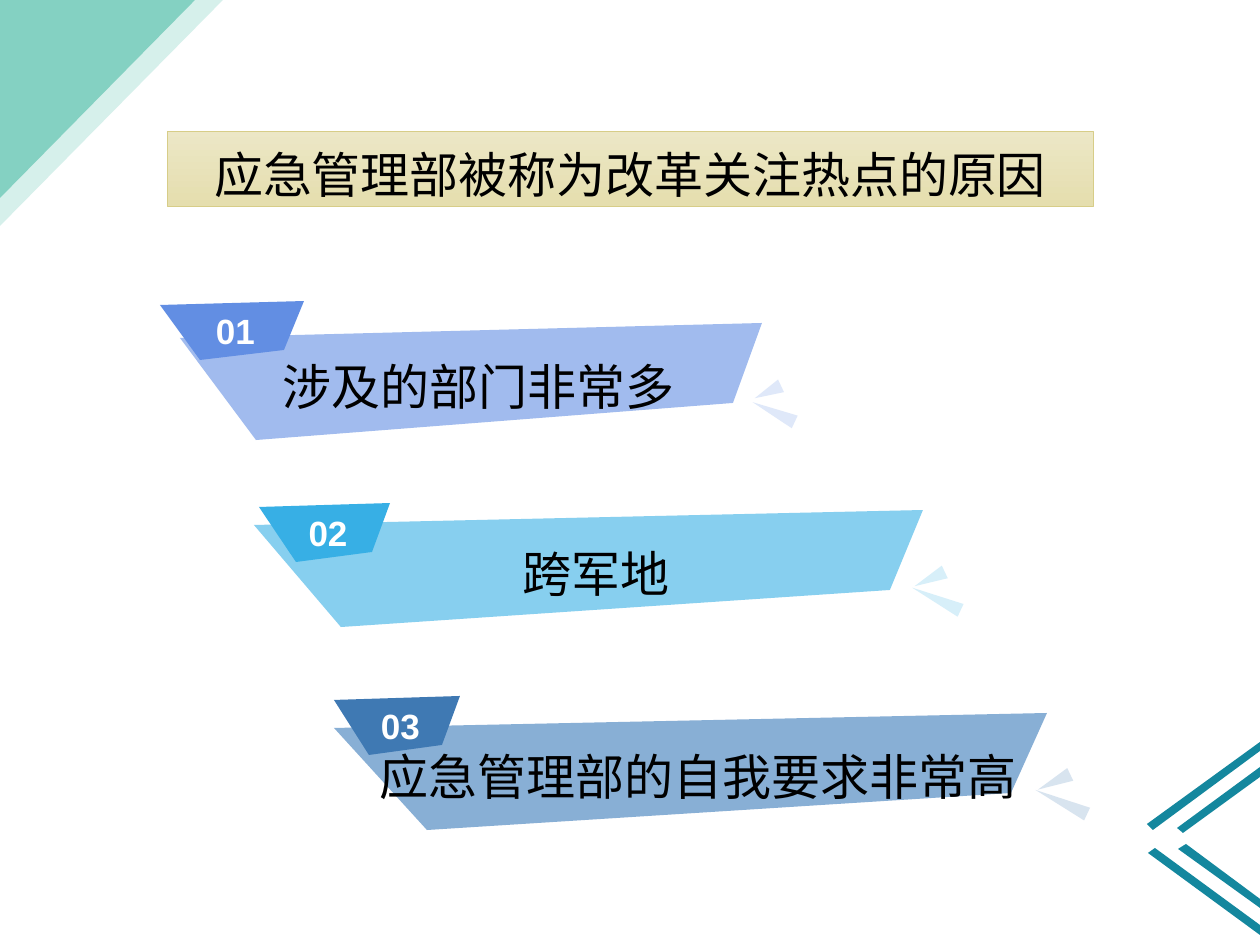
import pptx
import pptx.util
import pptx.dml.color
import pptx.enum.shapes
import pptx.enum.text
import pptx.oxml.ns
import lxml.etree

SCALE = 914400 / 126
COLORS = {
    "mint": "84D1C2", "pale_mint": "D6F0EB", "teal": "14879E",
    "cream": "ECE7C6", "sand": "E5DEAE", "edge": "D7CD88",
    "black": "000000", "white": "FFFFFF",
}
ITEMS = [
    {"number": "01", "text": "涉及的部门非常多", "band": (180, 323, 582),
     "tab": (160, 301, 144), "light": "A1BBEE", "dark": "628EE3"},
    {"number": "02", "text": "跨军地", "band": (254, 510, 669),
     "tab": (259, 503, 131), "light": "87CFEF", "dark": "37AFE5"},
    {"number": "03", "text": "应急管理部的自我要求非常高", "band": (334, 713, 713),
     "tab": (334, 696, 126), "light": "88AFD5", "dark": "3F79B3"},
]
BAND_CORNERS = [(1, 0), (0.95, 80), (0.13, 117), (0, 15)]
TAB_CORNERS = [(1, 0), (0.86, 49), (0.28, 59), (0, 4)]
STRIPES = [
    [(1147, 824), (1153, 830), (1260, 751), (1260, 742)],
    [(1148, 853), (1260, 935), (1260, 925), (1155, 848)],
    [(1260, 767), (1177, 828), (1183, 833), (1260, 777)],
    [(1186, 844), (1178, 849), (1260, 908), (1260, 899)],
]
SPARKS = [(0.02, 89, 0.08, 295.1), (0.01, 69, 0.05, 244.7)]
HEADING = {"name": "Noto Sans CJK SC", "size": pptx.util.Pt(28), "bold": False}
NUMBER = {"name": "Arial", "size": pptx.util.Pt(20), "bold": True}


def px(value):
    return pptx.util.Emu(round(value * SCALE))


def rgb(color):
    return pptx.dml.color.RGBColor.from_string(COLORS.get(color, color))


def set_values(target, values):
    for name, value in values.items():
        setattr(target, name, value)


class SlidePainter:
    def __init__(self, slide):
        self.slide = slide

    def paint(self, shape, color, alpha=None):
        shape.shadow.inherit = False
        shape.fill.solid()
        shape.fill.fore_color.rgb = rgb(color)
        shape.line.fill.background()
        if alpha is not None:
            tag = pptx.oxml.ns.qn("a:srgbClr")
            node = next(shape._element.spPr.iter(tag))
            lxml.etree.SubElement(node, pptx.oxml.ns.qn("a:alpha"), val=str(alpha * 1000))

    def add_text(self, shape, text, font, color, insets, spacing=1.0):
        frame = shape.text_frame
        set_values(frame, {
            "word_wrap": True,
            "auto_size": pptx.enum.text.MSO_AUTO_SIZE.NONE,
            "vertical_anchor": pptx.enum.text.MSO_ANCHOR.MIDDLE,
        })
        sides = ("margin_left", "margin_top", "margin_right", "margin_bottom")
        set_values(frame, dict(zip(sides, map(px, insets))))
        para = frame.paragraphs[0]
        set_values(para, {"alignment": pptx.enum.text.PP_ALIGN.CENTER, "line_spacing": spacing})
        span = para.add_run()
        span.text = text
        set_values(span.font, font)
        span.font.color.rgb = rgb(color)
        properties = span._r.get_or_add_rPr()
        lxml.etree.SubElement(properties, pptx.oxml.ns.qn("a:ea"), typeface=font["name"])

    def title(self, text, left, top, width, height):
        box = self.slide.shapes.title
        set_values(box, {"left": px(left), "top": px(top), "width": px(width), "height": px(height)})
        box.fill.gradient()
        box.fill.gradient_angle = 270
        for stop, color in zip(box.fill.gradient_stops, ("cream", "sand")):
            stop.color.rgb = rgb(color)
        box.line.color.rgb = rgb("edge")
        box.line.width = pptx.util.Pt(0.5)
        self.add_text(box, text, HEADING, "black", (13, 6, 13, 6), 1.2)

    def corner(self, width, height, color):
        kind = pptx.enum.shapes.MSO_SHAPE.RIGHT_TRIANGLE
        shape = self.slide.shapes.add_shape(kind, 0, 0, px(width), px(height))
        shape._element.spPr.xfrm.set("flipV", "1")
        self.paint(shape, color)

    def polygon(self, points, color):
        builder = self.slide.shapes.build_freeform(*points[0], scale=SCALE)
        builder.add_line_segments(points[1:], close=True)
        shape = builder.convert_to_shape()
        self.paint(shape, color)
        return shape

    def panel(self, place, corners, color):
        left, top, width = place
        return self.polygon([(round(left + x * width), top + y) for x, y in corners], color)

    def spark(self, center_x, center_y, length, rotation, color):
        kind = pptx.enum.shapes.MSO_SHAPE.ISOSCELES_TRIANGLE
        shape = self.slide.shapes.add_shape(
            kind, px(center_x - 7), px(center_y - length / 2), px(14), px(length))
        shape.rotation = rotation
        self.paint(shape, color, alpha=20)

    def item(self, number, text, band, tab, light, dark):
        banner = self.panel(band, BAND_CORNERS, light)
        self.add_text(banner, text, HEADING, "black", (30, 15, 15, 6))
        left, top, width = band
        for shift, drop, length, rotation in SPARKS:
            self.spark(left + width + shift * width, top + drop, length * width, rotation, dark)
        label = self.panel(tab, TAB_CORNERS, dark)
        self.add_text(label, number, NUMBER, "white", (20, 6, 13, 6))


def main():
    deck = pptx.Presentation()
    deck.slide_width, deck.slide_height = px(1260), px(945)
    painter = SlidePainter(deck.slides.add_slide(deck.slide_layouts[5]))
    painter.corner(223, 226, "pale_mint")
    painter.corner(195, 198, "mint")
    for stripe in STRIPES:
        painter.polygon(stripe, "teal")
    painter.title("应急管理部被称为改革关注热点的原因", 167, 131, 926, 75)
    for item in ITEMS:
        painter.item(**item)
    deck.save("out.pptx")


if __name__ == "__main__":
    main()
